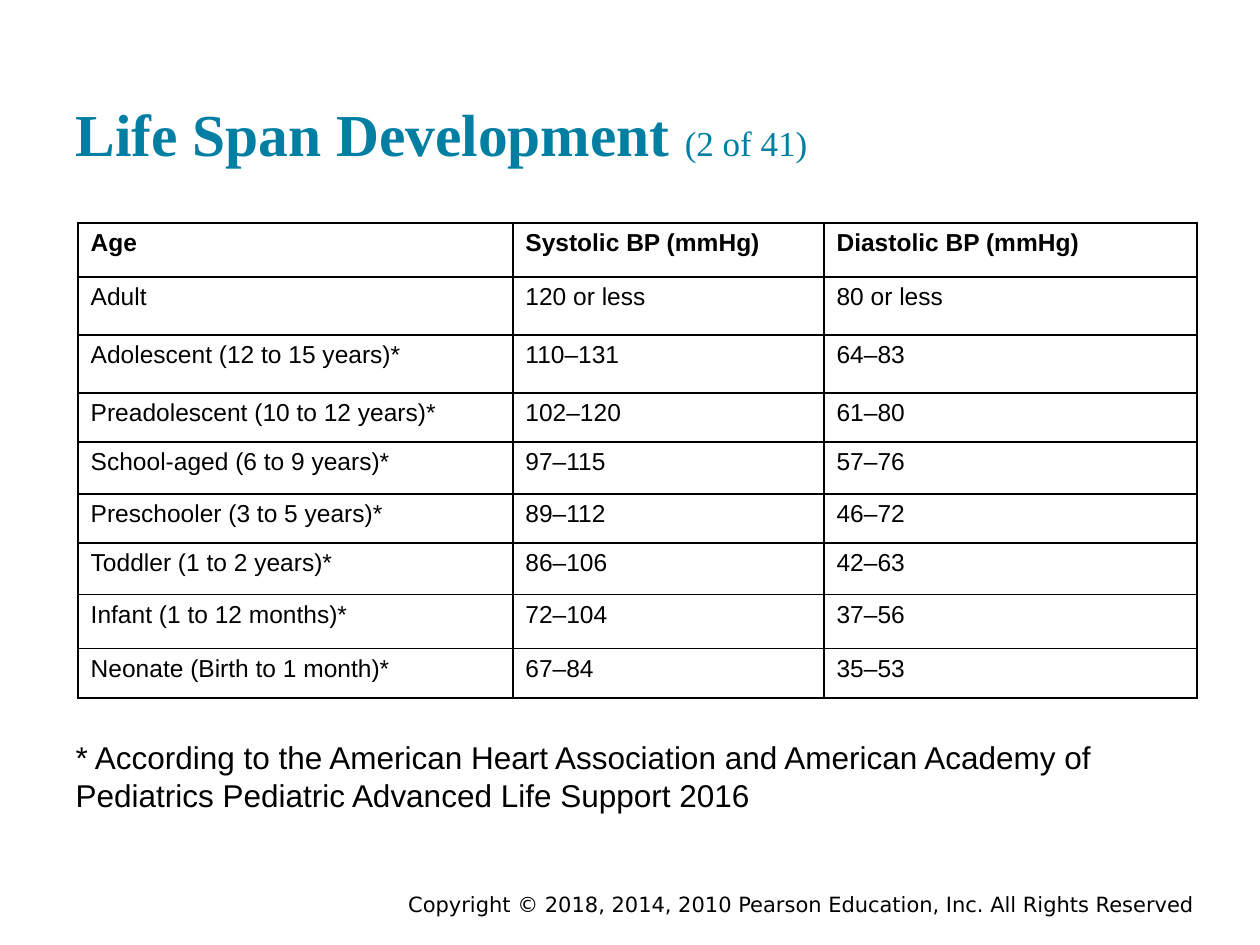
from lxml.etree import SubElement
from pptx import Presentation
from pptx.dml.color import RGBColor
from pptx.enum.text import MSO_ANCHOR as Anchor, MSO_AUTO_SIZE as AutoSize, PP_ALIGN as Align
from pptx.oxml import parse_xml
from pptx.oxml.ns import nsdecls, qn
from pptx.util import Inches, Pt

COLORS = {"title": "007FA3", "text": "000000", "border": "000000"}
COL_WIDTHS = [3.45, 2.47, 2.96]
ROW_HEIGHTS = [0.43, 0.46, 0.46, 0.39, 0.41, 0.39, 0.41, 0.43, 0.39]
BLOOD_PRESSURE = [
    ("Age", "Systolic BP (mmHg)", "Diastolic BP (mmHg)"),
    ("Adult", "120 or less", "80 or less"),
    ("Adolescent (12 to 15 years)*", "110–131", "64–83"),
    ("Preadolescent (10 to 12 years)*", "102–120", "61–80"),
    ("School-aged (6 to 9 years)*", "97–115", "57–76"),
    ("Preschooler (3 to 5 years)*", "89–112", "46–72"),
    ("Toddler (1 to 2 years)*", "86–106", "42–63"),
    ("Infant (1 to 12 months)*", "72–104", "37–56"),
    ("Neonate (Birth to 1 month)*", "67–84", "35–53"),
]


def style(font, name, size, color, bold=False):
    font.name, font.size, font.bold = name, Pt(size), bold
    font.color.rgb = RGBColor.from_string(COLORS[color])


def place(sp, box, anchor, inset=0.1):
    """Move a text shape to its box and fix its text frame; return the frame."""
    sp.left, sp.top, sp.width, sp.height = map(Inches, box)
    tf = sp.text_frame
    tf.word_wrap, tf.auto_size, tf.vertical_anchor = True, AutoSize.NONE, anchor
    tf.margin_left = tf.margin_right = Inches(0.1)
    tf.margin_top = tf.margin_bottom = Inches(inset)
    return tf


def fill_title(sp, box, heading, counter):
    p = place(sp, box, Anchor.BOTTOM).paragraphs[0]
    p.alignment = Align.LEFT
    for text, size, bold in ((heading, 34, True), (counter, 20, False)):
        r = p.add_run()
        r.text = text
        style(r.font, "Times New Roman", size, "title", bold)


def fill_footnote(sp, box, text):
    p = place(sp, box, Anchor.MIDDLE).paragraphs[0]
    p.text = text
    p.alignment, p.space_before = Align.LEFT, Pt(0)
    pPr = p._p.get_or_add_pPr()
    pPr.set("marL", "0")
    pPr.set("indent", "0")
    SubElement(pPr, qn("a:buNone"))
    style(p.runs[0].font, "Arial", 18, "text")


def add_copyright(s, box, text):
    sp = s.shapes.add_textbox(*map(Inches, box))
    p = place(sp, box, Anchor.MIDDLE, 0.05).paragraphs[0]
    p.text = text
    p.alignment = Align.RIGHT
    style(p.runs[0].font, "DejaVu Sans", 12, "text")


def set_borders(cell):
    tcPr = cell._tc.get_or_add_tcPr()
    for i, side in enumerate("LRTB"):
        tcPr.insert(i, parse_xml(
            f'<a:ln{side} {nsdecls("a")} w="{Pt(1)}"><a:solidFill>'
            f'<a:srgbClr val="{COLORS["border"]}"/></a:solidFill></a:ln{side}>'))


def add_pressure_table(s, box, rows):
    table = s.shapes.add_table(len(rows), len(rows[0]), *map(Inches, box)).table
    table.horz_banding = False
    for column, width in zip(table.columns, COL_WIDTHS):
        column.width = Inches(width)
    for i, (row, height, values) in enumerate(zip(table.rows, ROW_HEIGHTS, rows)):
        row.height = Inches(height)
        for cell, value in zip(row.cells, values):
            cell.fill.background()
            set_borders(cell)
            cell.text = value
            r = cell.text_frame.paragraphs[0].runs[0]
            style(r.font, "Arial", 14, "text", bold=i == 0)


def main():
    prs = Presentation()
    prs.slide_width, prs.slide_height = Inches(10), Inches(7.5)
    s = prs.slides.add_slide(prs.slide_layouts[1])
    fill_title(s.shapes.title, (0.5, 0.24, 9, 1.2), "Life Span Development ", "(2 of 41)")
    add_pressure_table(s, (0.62, 1.77, 8.88, 3.76), BLOOD_PRESSURE)
    fill_footnote(s.placeholders[1], (0.5, 5.87, 9, 0.58),
                  "* According to the American Heart Association and American Academy of "
                  "Pediatrics Pediatric Advanced Life Support 2016")
    add_copyright(s, (2.92, 7.05, 6.66, 0.25),
                  "Copyright © 2018, 2014, 2010 Pearson Education, Inc. All Rights Reserved")
    prs.save("out.pptx")


if __name__ == "__main__":
    main()
